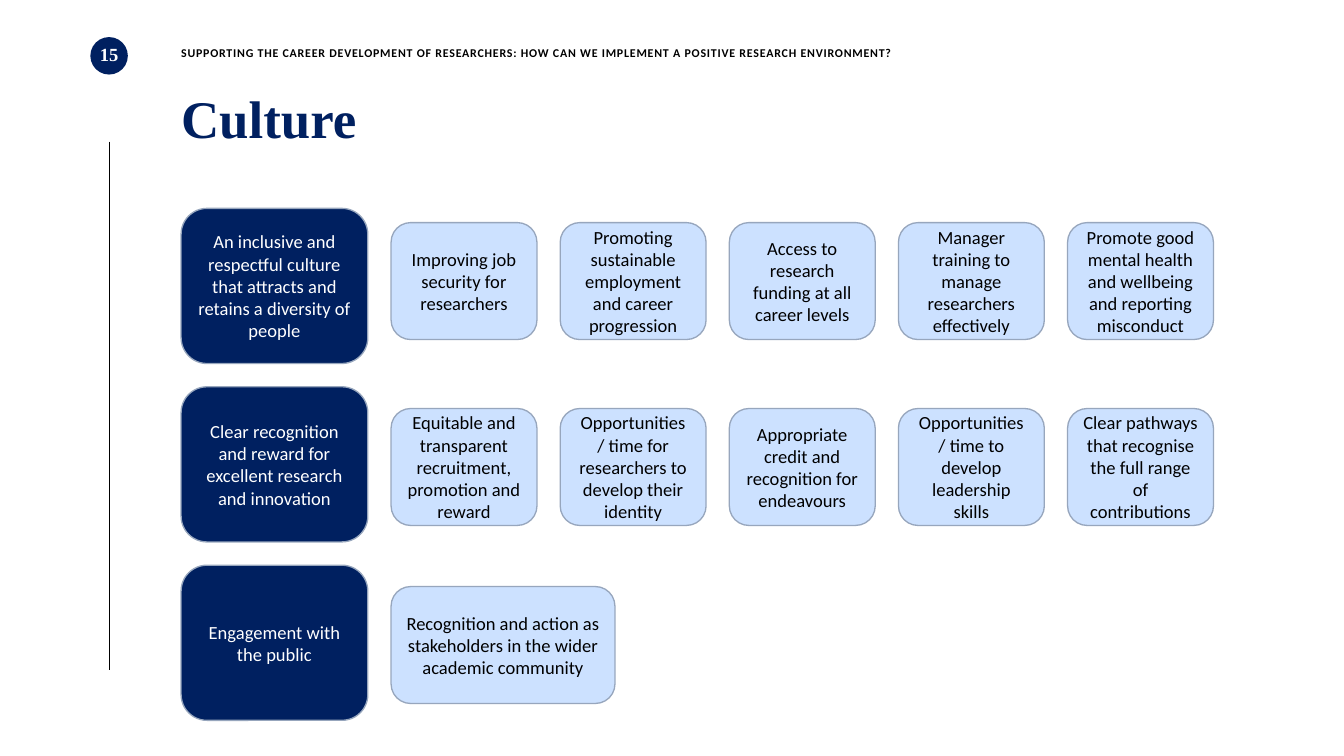
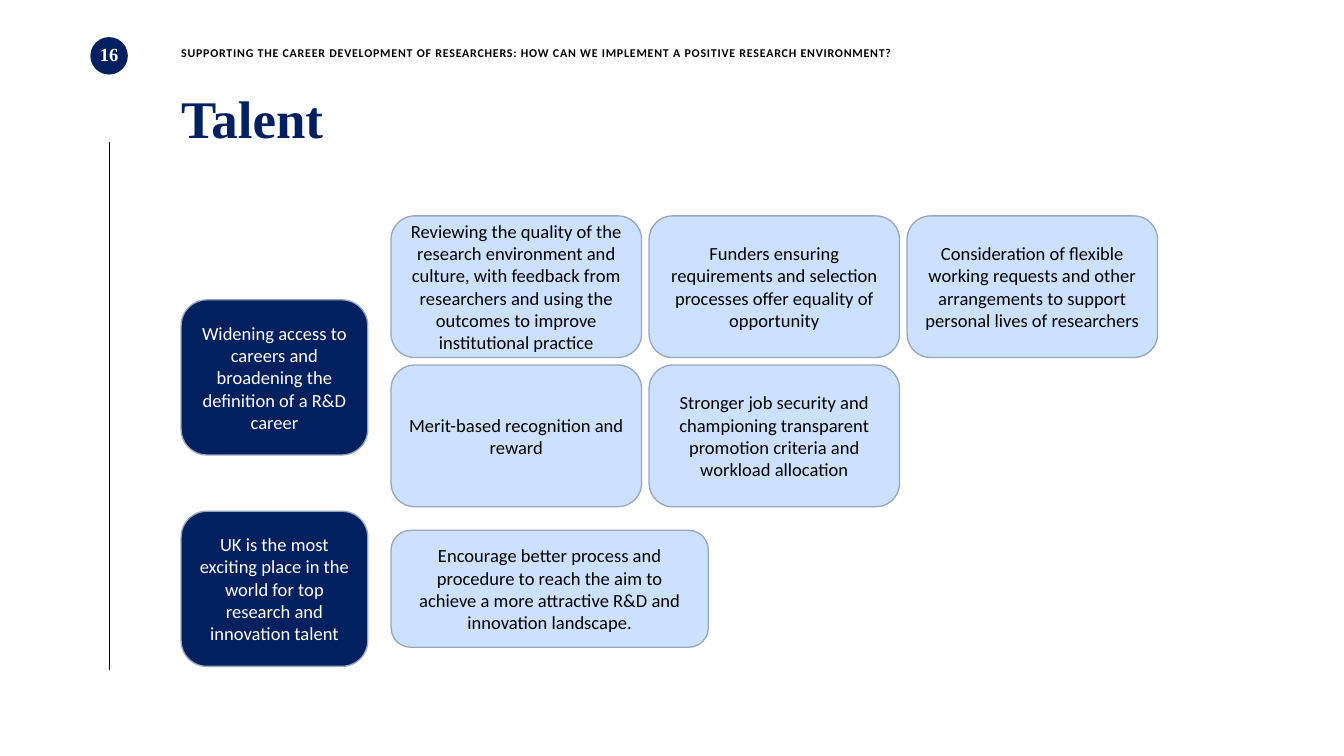
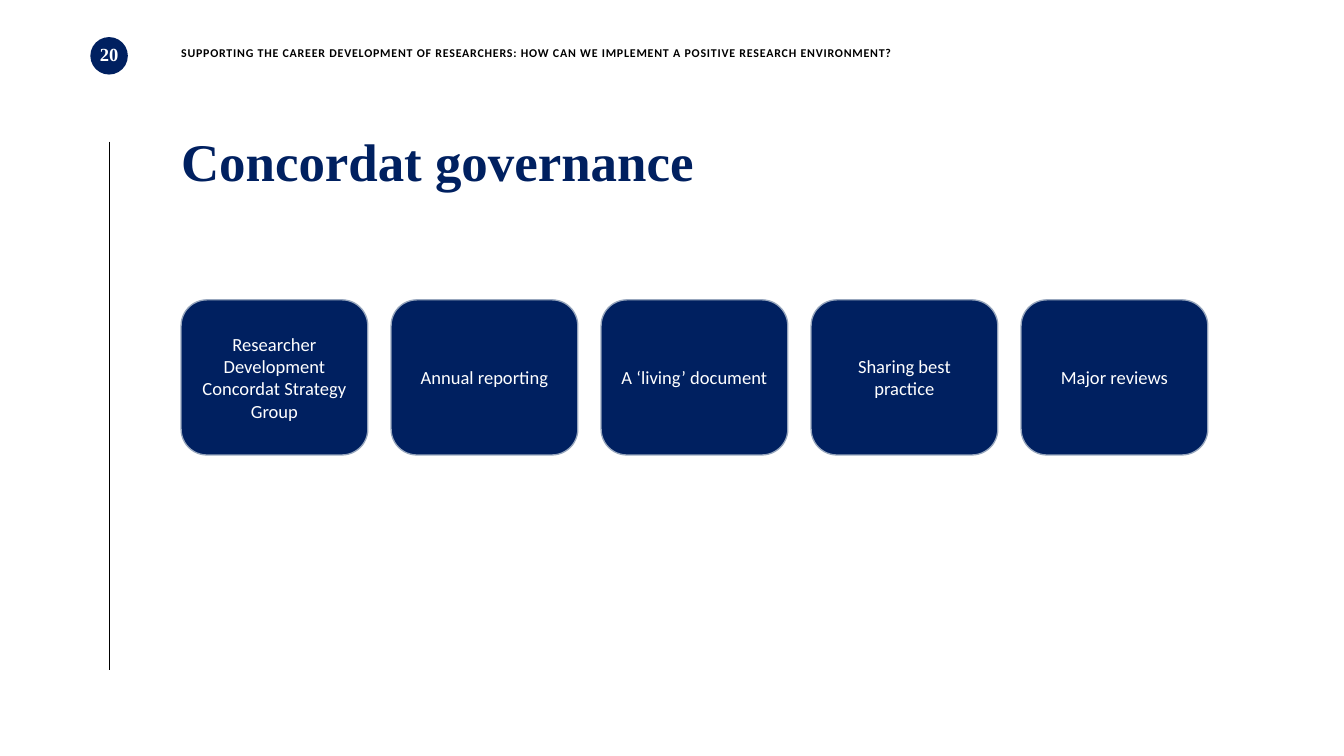
from dataclasses import dataclass

from lxml import etree
from pptx import Presentation
from pptx.dml.color import RGBColor
from pptx.enum import shapes, text
from pptx.oxml import ns
from pptx.util import Cm, Pt

# Shared style
NAVY, PALE, EDGE = "002060", "CCE1FF", "97A6BD"
BLACK, WHITE = "000000", "FFFFFF"
SANS, SERIF = "Calibri", "Times New Roman"
HEADER = ("SUPPORTING THE CAREER DEVELOPMENT OF RESEARCHERS: "
          "HOW CAN WE IMPLEMENT A POSITIVE RESEARCH ENVIRONMENT?")

# Shared grid, in centimetres
LEFT = 4.83
GAP = 0.62
THEME_WIDTH, THEME_HEIGHT = 4.98, 4.14
ACTION_WIDTH, ACTION_HEIGHT = 3.89, 3.12
ACTION_LEFT = LEFT + THEME_WIDTH + GAP
MIDDLE_TOP = 8.0


@dataclass(frozen=True)
class Area:
    left: float
    top: float
    width: float
    height: float

    def lengths(self) -> tuple:
        return Cm(self.left), Cm(self.top), Cm(self.width), Cm(self.height)


@dataclass(frozen=True)
class Style:
    font: str
    size: float
    colour: str
    bold: bool = False
    align: text.PP_ALIGN = text.PP_ALIGN.LEFT
    anchor: text.MSO_ANCHOR = text.MSO_ANCHOR.MIDDLE
    line_spacing: float = 1.0
    letter_spacing: float = 0


@dataclass(frozen=True)
class Cards:
    """A run of rounded boxes, filled row by row."""
    first: Area
    labels: list[str]
    columns: int = 1
    gap: float = GAP
    dark: bool = False


CENTRE = text.PP_ALIGN.CENTER
TITLE = Style(SERIF, 40, NAVY, bold=True, anchor=text.MSO_ANCHOR.TOP, line_spacing=0.85)
RUNNING_HEAD = Style(SANS, 9, BLACK, bold=True, letter_spacing=0.6)
NUMBER = Style(SERIF, 14, WHITE, bold=True, align=CENTRE)
DARK_CARD = Style(SANS, 14, WHITE, align=CENTRE)
PALE_CARD = Style(SANS, 14, BLACK, align=CENTRE)


def rgb(colour: str) -> RGBColor:
    return RGBColor.from_string(colour)


# Drawing helpers
def write(box, words: str, style: Style) -> None:
    frame = box.text_frame
    frame.text = words
    frame.vertical_anchor = style.anchor
    para = frame.paragraphs[0]
    para.alignment = style.align
    para.line_spacing = style.line_spacing
    for span in para.runs:
        span.font.name, span.font.size = style.font, Pt(style.size)
        span.font.bold = style.bold
        span.font.color.rgb = rgb(style.colour)
        if style.letter_spacing:
            span.font._element.set("spc", str(round(style.letter_spacing * 100)))


def add_text(page, area: Area, words: str, style: Style, wrap: bool = True) -> None:
    box = page.shapes.add_textbox(*area.lengths())
    frame = box.text_frame
    frame.margin_left = frame.margin_right = frame.margin_top = frame.margin_bottom = 0
    write(box, words, style)
    frame.word_wrap = wrap


def add_filled(page, kind: shapes.MSO_SHAPE, area: Area, fill: str):
    shape = page.shapes.add_shape(kind, *area.lengths())
    shape.shadow.inherit = False
    shape.fill.solid()
    shape.fill.fore_color.rgb = rgb(fill)
    shape.line.fill.background()
    return shape


def add_cards(page, cards: Cards) -> None:
    first = cards.first
    fill, style = (NAVY, DARK_CARD) if cards.dark else (PALE, PALE_CARD)
    for index, label in enumerate(cards.labels):
        row, column = divmod(index, cards.columns)
        area = Area(first.left + column * (first.width + cards.gap),
                    first.top + row * (first.height + cards.gap),
                    first.width, first.height)
        card = add_filled(page, shapes.MSO_SHAPE.ROUNDED_RECTANGLE, area, fill)
        card.line.color.rgb = rgb(EDGE)
        card.line.width = Pt(1)
        write(card, label, style)


def add_page(deck, number: int, title: str, title_top: float, groups: list[Cards]) -> None:
    page = deck.slides.add_slide(deck.slide_layouts[6])

    # Page number and side rule
    add_filled(page, shapes.MSO_SHAPE.OVAL, Area(2.41, 0.99, 1, 1), NAVY)
    add_text(page, Area(2.66, 1.14, 0.5, 0.6), str(number), NUMBER, wrap=False)
    rule = page.shapes.add_connector(
        shapes.MSO_CONNECTOR.STRAIGHT, Cm(2.91), Cm(3.78), Cm(2.91), Cm(17.88))
    rule.line.color.rgb = rgb(BLACK)
    rule.line.width = Pt(0.5)
    etree.SubElement(rule._element.spPr, ns.qn("a:effectLst"))

    # Running head, title and cards
    add_text(page, Area(LEFT, 1.09, 19.3, 0.66), HEADER, RUNNING_HEAD)
    add_text(page, Area(LEFT, title_top, 26.2, 1.45), title, TITLE)
    for cards in groups:
        add_cards(page, cards)


def theme(top: float) -> Area:
    return Area(LEFT, top, THEME_WIDTH, THEME_HEIGHT)


def action(top: float, width: float = ACTION_WIDTH, height: float = ACTION_HEIGHT) -> Area:
    return Area(ACTION_LEFT, top, width, height)


# Slide content
CULTURE = [
    Cards(theme(5.56), [
        "An inclusive and respectful culture that attracts and retains a diversity of people",
        "Clear recognition and reward for excellent research and innovation",
        "Engagement with the public",
    ], dark=True),
    Cards(action(5.94), [
        "Improving job security for researchers",
        "Promoting sustainable employment and career progression",
        "Access to research funding at all career levels",
        "Manager training to manage researchers effectively",
        "Promote good mental health and wellbeing and reporting misconduct",
    ], columns=5),
    Cards(action(10.9), [
        "Equitable and transparent recruitment, promotion and reward",
        "Opportunities / time for researchers to develop their identity",
        "Appropriate credit and recognition for endeavours",
        "Opportunities / time to develop leadership skills",
        "Clear pathways that recognise the full range of contributions",
    ], columns=5),
    Cards(action(15.65, width=5.97), [
        "Recognition and action as stakeholders in the wider academic community",
    ]),
]

TALENT = [
    Cards(theme(MIDDLE_TOP), [
        "Widening access to careers and broadening the definition of a R&D career",
        "UK is the most exciting place in the world for top research and innovation talent",
    ], gap=1.5, dark=True),
    Cards(action(5.76, width=6.68, height=3.78), [
        "Reviewing the quality of the research environment and culture, with feedback "
        "from researchers and using the outcomes to improve institutional practice",
        "Funders ensuring requirements and selection processes offer equality of opportunity",
        "Consideration of flexible working requests and other arrangements to support "
        "personal lives of researchers",
        "Merit-based recognition and reward",
        "Stronger job security and championing transparent promotion criteria and "
        "workload allocation",
    ], columns=3, gap=0.2),
    Cards(action(14.15, width=8.46), [
        "Encourage better process and procedure to reach the aim to achieve a more "
        "attractive R&D and innovation landscape.",
    ]),
]

GOVERNANCE = [
    Cards(theme(MIDDLE_TOP), [
        "Researcher Development Concordat Strategy Group",
        "Annual reporting",
        "A ‘living’ document",
        "Sharing best practice",
        "Major reviews",
    ], columns=5, dark=True),
]


def main() -> None:
    deck = Presentation()
    deck.slide_width, deck.slide_height = Cm(35.84), Cm(20.17)
    add_page(deck, 15, "Culture", 2.54, CULTURE)
    add_page(deck, 16, "Talent", 2.54, TALENT)
    add_page(deck, 20, "Concordat governance", 3.68, GOVERNANCE)
    deck.save("out.pptx")


if __name__ == "__main__":
    main()
